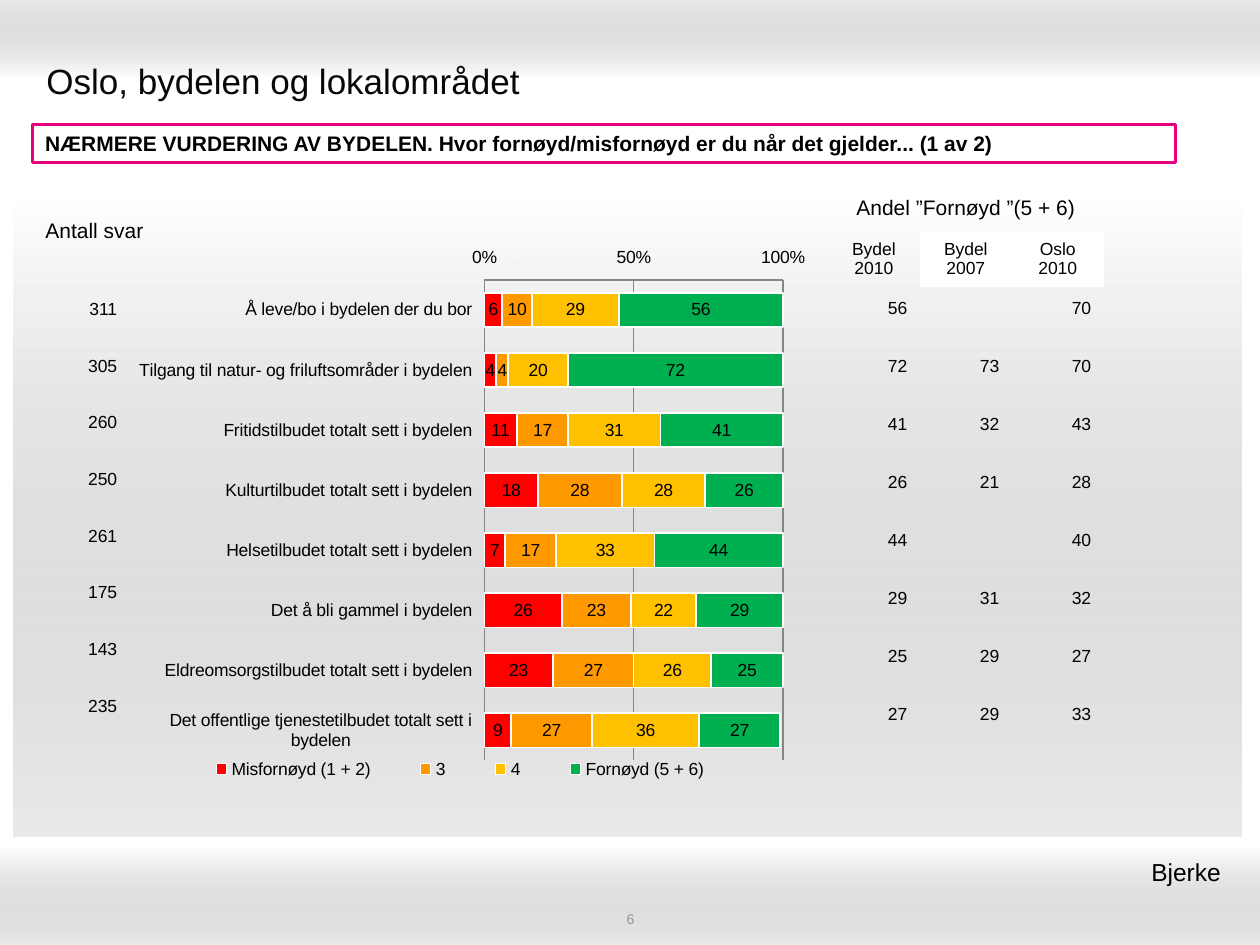
from lxml import etree
from pptx import Presentation
from pptx.chart.data import CategoryChartData
from pptx.dml.color import RGBColor
from pptx.enum.chart import XL_CHART_TYPE, XL_LEGEND_POSITION, XL_TICK_LABEL_POSITION, XL_TICK_MARK
from pptx.enum.shapes import MSO_SHAPE
from pptx.enum.text import MSO_ANCHOR, PP_ALIGN
from pptx.oxml import parse_xml
from pptx.oxml.ns import nsdecls, qn
from pptx.util import Inches, Pt

LEFT, CENTER, RIGHT = PP_ALIGN.LEFT, PP_ALIGN.CENTER, PP_ALIGN.RIGHT
MIDDLE = MSO_ANCHOR.MIDDLE
LOW = XL_TICK_LABEL_POSITION.LOW
TICK_NONE, TICK_INSIDE = XL_TICK_MARK.NONE, XL_TICK_MARK.INSIDE
RECT = MSO_SHAPE.RECTANGLE
FONT = "Arial"
NO_GRID_STYLE = "{2D5ABB26-0587-4C30-8999-92F81FD0307C}"

TITLE = "Oslo, bydelen og lokalområdet"
QUESTION = ("NÆRMERE VURDERING AV BYDELEN. "
            "Hvor fornøyd/misfornøyd er du når det gjelder... (1 av 2)")
DISTRICT = "Bjerke"
PAGE = "6"

# left, top, width, height, direction of the fade in degrees
PANELS = [
    (0, 0, 10, 0.62, 270),
    (0, 6.72, 10, 0.78, 90),
    (0.11, 1.56, 9.74, 5.08, 90),
]
CATEGORIES = [
    "Å leve/bo i bydelen der du bor",
    "Tilgang til natur- og friluftsområder i bydelen",
    "Fritidstilbudet totalt sett i bydelen",
    "Kulturtilbudet totalt sett i bydelen",
    "Helsetilbudet totalt sett i bydelen",
    "Det å bli gammel i bydelen",
    "Eldreomsorgstilbudet totalt sett i bydelen",
    "Det offentlige tjenestetilbudet totalt sett i bydelen",
]
SERIES = [
    ("Misfornøyd (1 + 2)", "FF0000", (6, 4, 11, 18, 7, 26, 23, 9)),
    ("3", "FF9900", (10, 4, 17, 28, 17, 23, 27, 27)),
    ("4", "FFC000", (29, 20, 31, 28, 33, 22, 26, 36)),
    ("Fornøyd (5 + 6)", "00B050", (56, 72, 41, 26, 44, 29, 25, 27)),
]
ANSWERS_TITLE = "Antall svar"
ANSWERS = [["311"], ["305"], ["260"], ["250"], ["261"], ["175"], ["143"], ["235"]]
SHARE_TITLE = "Andel ”Fornøyd ”(5 + 6)"
SHARE_HEADS = ["Bydel\n2010", "Bydel\n2007", "Oslo\n2010"]
SHARES = [
    ["56", "", "70"], ["72", "73", "70"], ["41", "32", "43"], ["26", "21", "28"],
    ["44", "", "40"], ["29", "31", "32"], ["25", "29", "27"], ["27", "29", "33"],
]


def rgb(value):
    return RGBColor.from_string(value)


def style_font(font, size, color="000000", bold=False):
    font.name, font.size, font.bold = FONT, Pt(size), bold
    font.color.rgb = rgb(color)


def write(tf, text, size, color="000000", bold=False, align=LEFT):
    """Fill a text frame, one paragraph per line of text."""
    for i, line in enumerate(text.split("\n")):
        p = tf.paragraphs[0] if i == 0 else tf.add_paragraph()
        p.alignment = align
        r = p.add_run()
        r.text = line
        style_font(r.font, size, color, bold)


def add_text(s, box, text, size, color="000000", align=LEFT):
    tf = s.shapes.add_textbox(*map(Inches, box)).text_frame
    tf.word_wrap = True
    tf.vertical_anchor = MIDDLE
    write(tf, text, size, color, align=align)
    return tf


def add_rect(s, box):
    sp = s.shapes.add_shape(RECT, *map(Inches, box))
    sp.shadow.inherit = False
    return sp


def add_fading_panel(s, box, angle):
    sp = add_rect(s, box)
    sp.line.fill.background()
    sp.fill.background()
    fill = parse_xml(
        f'<a:gradFill {nsdecls("a")} rotWithShape="1"><a:gsLst>'
        '<a:gs pos="0"><a:srgbClr val="FFFFFF"/></a:gs>'
        '<a:gs pos="100000"><a:srgbClr val="999999"><a:alpha val="20000"/></a:srgbClr></a:gs>'
        f'</a:gsLst><a:lin ang="{angle * 60000}" scaled="1"/></a:gradFill>')
    props = sp._element.spPr
    props.replace(props.find(qn("a:noFill")), fill)


def add_plain_table(s, left, top, widths, heights):
    frame = s.shapes.add_table(len(heights), len(widths), Inches(left), Inches(top),
                               Inches(sum(widths)), Inches(sum(heights)))
    table = frame.table
    table.first_row = table.horz_banding = False
    table._tbl.tblPr.find(qn("a:tableStyleId")).text = NO_GRID_STYLE
    for column, width in zip(table.columns, widths):
        column.width = Inches(width)
    for row, height in zip(table.rows, heights):
        row.height = Inches(height)
    for cell in table.iter_cells():
        cell.fill.background()
        cell.vertical_anchor = MIDDLE
    return table


def add_number_table(s, left, top, width, height, rows):
    table = add_plain_table(s, left, top, [width] * len(rows[0]), [height] * len(rows))
    for y, row in enumerate(rows):
        for x, text in enumerate(row):
            write(table.cell(y, x).text_frame, text, 10, align=RIGHT)


def place(parent, x, y, w, h, inner=False):
    """Give a plot area or legend a fixed place, in fractions of the chart."""
    for old in parent.findall(qn("c:layout")):
        parent.remove(old)
    layout = etree.Element(qn("c:layout"))
    manual = etree.SubElement(layout, qn("c:manualLayout"))
    values = [("layoutTarget", "inner")] if inner else []
    values += [("xMode", "edge"), ("yMode", "edge"), ("x", x), ("y", y), ("w", w), ("h", h)]
    for tag, value in values:
        etree.SubElement(manual, qn(f"c:{tag}")).set("val", str(value))
    position = parent.find(qn("c:legendPos"))
    parent.insert(0 if position is None else 1, layout)


def add_rating_chart(s):
    data = CategoryChartData(number_format="0")
    data.categories = CATEGORIES
    for name, _, values in SERIES:
        data.add_series(name, values)
    box = map(Inches, (0.98, 1.86, 5.51, 4.54))
    chart = s.shapes.add_chart(XL_CHART_TYPE.BAR_STACKED, *box, data).chart
    style_font(chart.font, 10)
    chart.has_title = False
    plot = chart.plots[0]
    plot.gap_width, plot.overlap = 75, 100
    plot.vary_by_categories = False
    for series, (_, color, _) in zip(plot.series, SERIES):
        series.format.fill.solid()
        series.format.fill.fore_color.rgb = rgb(color)
        series.format.line.color.rgb = rgb("FFFFFF")
        series.format.line.width = Pt(1)
        labels = series.data_labels
        labels.show_value = True
        labels.number_format, labels.number_format_is_linked = "0", False
        style_font(labels.font, 10)

    cat, val = chart.category_axis, chart.value_axis
    cat.reverse_order = True
    cat.major_tick_mark = TICK_NONE
    val.minimum_scale, val.maximum_scale, val.major_unit = 0, 100, 50
    val.major_tick_mark = TICK_INSIDE
    val.has_major_gridlines = True
    val.tick_labels.number_format = "General\\%"
    val.tick_labels.number_format_is_linked = False
    for axis in (cat, val):
        axis.tick_label_position = LOW
    for line in (cat.format.line, val.format.line, val.major_gridlines.format.line):
        line.color.rgb = rgb("868686")
        line.width = Pt(0.75)

    chart.has_legend = True
    chart.legend.position = XL_LEGEND_POSITION.BOTTOM
    chart.legend.include_in_layout = False
    place(chart.legend._element, 0.07, 0.91, 0.83, 0.05)
    place(plot._element.getparent(), 0.52, 0.08, 0.43, 0.84, inner=True)


prs = Presentation()
prs.slide_width, prs.slide_height = Inches(10), Inches(7.5)
s = prs.slides.add_slide(prs.slide_layouts[6])

for *box, angle in PANELS:
    add_fading_panel(s, box, angle)
add_text(s, (0.27, 0.36, 9.45, 0.55), TITLE, 20, "080808")
add_text(s, (3.42, 7.22, 3.17, 0.14), PAGE, 8, "969696", CENTER)

question = add_rect(s, (0.26, 0.99, 9.07, 0.3))
question.fill.solid()
question.fill.fore_color.rgb = rgb("FFFFFF")
question.line.color.rgb = rgb("E7007E")
question.line.width = Pt(2)
write(question.text_frame, QUESTION, 12, bold=True)

add_rating_chart(s)
add_number_table(s, 6.57, 2.22, 0.73, 0.46, SHARES)

heads = add_plain_table(s, 6.57, 1.47, [0.73] * 3, [0.37, 0.43])
heads.cell(0, 0).merge(heads.cell(0, 2))
write(heads.cell(0, 0).text_frame, SHARE_TITLE, 12, align=CENTER)
for x, text in enumerate(SHARE_HEADS):
    cell = heads.cell(1, x)
    write(cell.text_frame, text, 10, align=CENTER)
    if x > 0:
        cell.fill.solid()
        cell.fill.fore_color.rgb = rgb("FFFFFF")

add_number_table(s, 0.51, 2.23, 0.52, 0.45, ANSWERS)
answers_head = add_plain_table(s, 0.04, 1.54, [1.42], [0.59])
write(answers_head.cell(0, 0).text_frame, ANSWERS_TITLE, 12, align=CENTER)

district = add_text(s, (6.1, 6.75, 3.74, 0.34), DISTRICT, 14, align=RIGHT)
district.margin_right = Inches(0.15)

prs.save("out.pptx")
